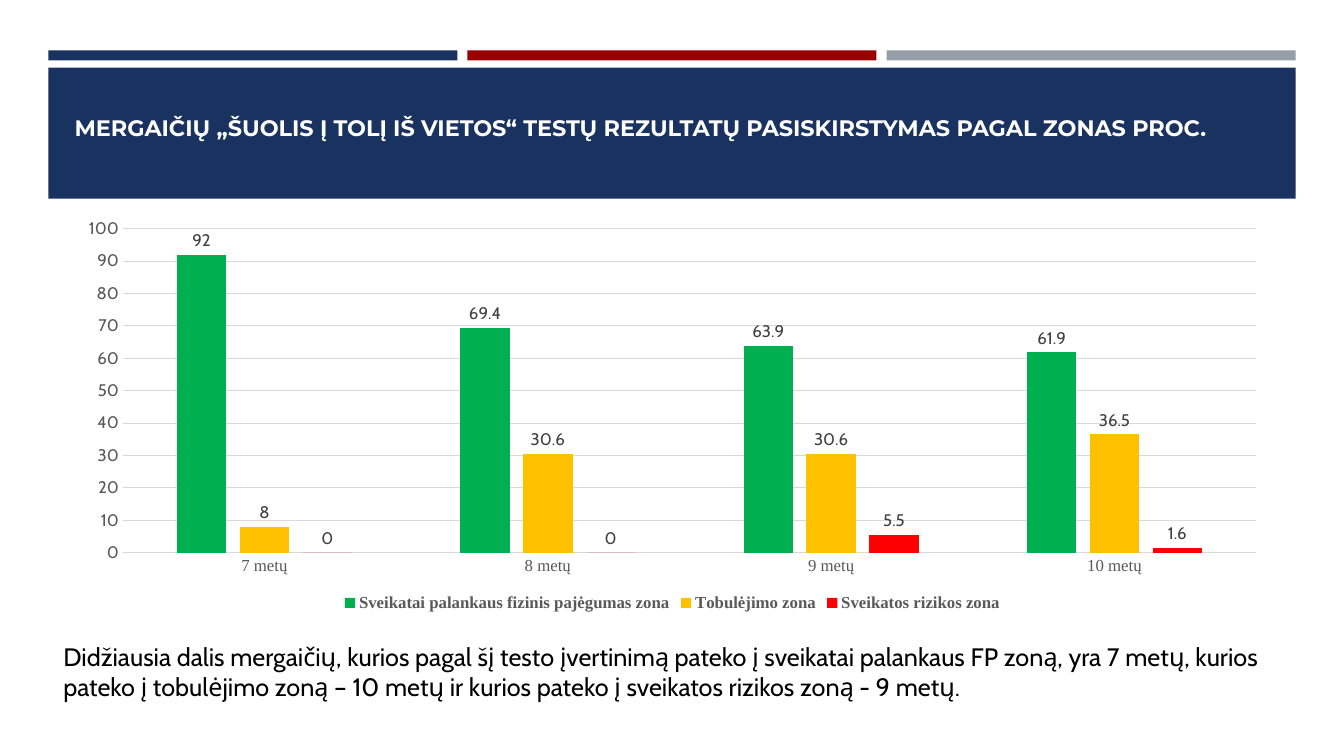
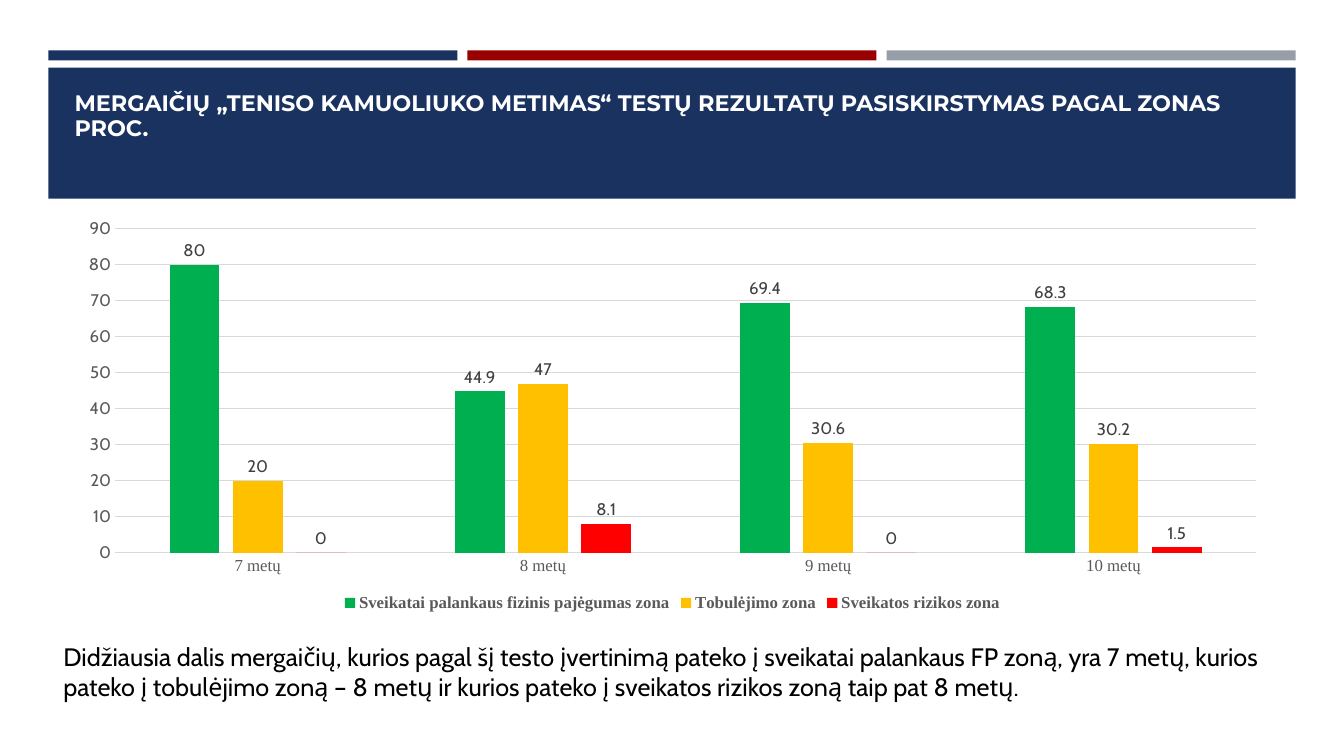
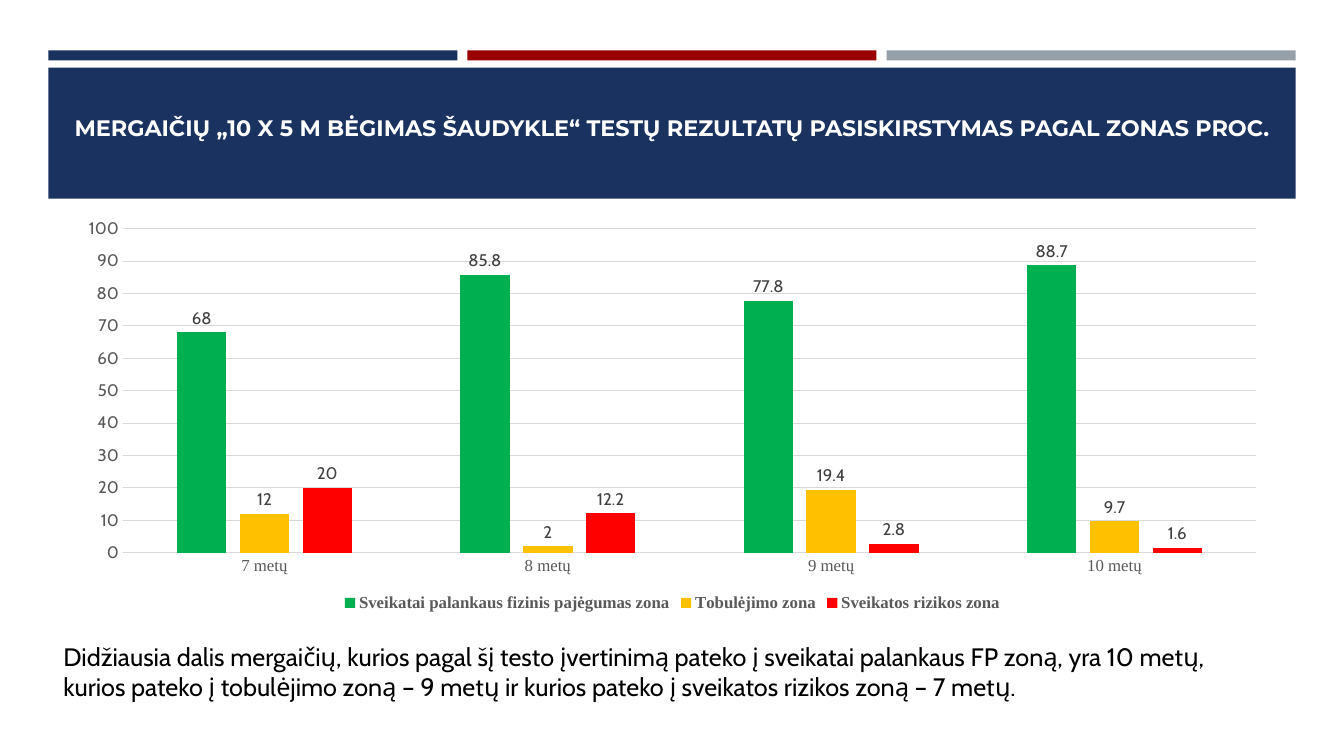
from pptx import Presentation, util as u
from pptx.chart.data import CategoryChartData
from pptx.dml.color import RGBColor
from pptx.enum import chart as ch, shapes, text

COLORS = {"navy": "1A3260", "red": "990000", "steel": "969FA7", "white": "FFFFFF",
          "black": "000000", "axis": "595959", "label": "404040", "grid": "D9D9D9"}
HEAD_FONT, BODY_FONT, CHART_FONT = "Montserrat", "Cabin", "Times New Roman"
STRIPES = ["navy", "red", "steel"]
ZONES = {"Sveikatai palankaus fizinis pajėgumas zona": "00B050",
         "Tobulėjimo zona": "FFC000",
         "Sveikatos rizikos zona": "FF0000"}
AGES = ["7 metų", "8 metų", "9 metų", "10 metų"]

BAND_BOX = (0.48, 0.5, 12.37, 1.47)
TITLE_BOX = (0.64, 0.61, 12.06, 1.11)
CHART_BOX = (0.64, 2.09, 12.06, 4.02)
SUMMARY_BOX = (0.53, 5.93, 12.06, 1.47)

TITLE = "MERGAIČIŲ „{}“ TESTŲ REZULTATŲ PASISKIRSTYMAS PAGAL ZONAS PROC."
SUMMARY = ("Didžiausia dalis mergaičių, kurios pagal šį testo įvertinimą pateko į sveikatai "
           "palankaus FP zoną, yra {} metų, kurios pateko į tobulėjimo zoną – {} metų ir "
           "kurios pateko į sveikatos rizikos zoną {} metų.")
TESTS = [
    ("ŠUOLIS Į TOLĮ IŠ VIETOS", ("7", "10", "- 9"),
     [(92, 69.4, 63.9, 61.9), (8, 30.6, 30.6, 36.5), (0, 0, 5.5, 1.6)]),
    ("TENISO KAMUOLIUKO METIMAS", ("7", "8", "taip pat 8"),
     [(80, 44.9, 69.4, 68.3), (20, 47, 30.6, 30.2), (0, 8.1, 0, 1.5)]),
    ("10 X 5 M BĖGIMAS ŠAUDYKLE", ("10", "9", "– 7"),
     [(68, 85.8, 77.8, 88.7), (12, 2, 19.4, 9.7), (20, 12.2, 2.8, 1.6)]),
]


def rgb(value):
    """Turn a hex string into a colour."""
    return RGBColor.from_string(value)


def inches(box):
    """Turn a box of numbers into lengths."""
    return [u.Inches(v) for v in box]


def set_font(font, name, size, color, bold=False):
    """Format a font."""
    font.name, font.size, font.bold = name, u.Pt(size), bold
    font.color.rgb = rgb(COLORS[color])


def add_band(s, layout, box):
    """Put the three stripes and the title band on the layout."""
    left, top, width, height = box
    gap, stripe_h, band_drop = 0.1, 0.1, 0.17
    stripe_w = (width - 2 * gap) / len(STRIPES)
    parts = [(color, (left + i * (stripe_w + gap), top, stripe_w, stripe_h))
             for i, color in enumerate(STRIPES)]
    parts.append(("navy", (left, top + band_drop, width, height - band_drop)))
    for color, part in parts:
        sp = s.shapes.add_shape(shapes.MSO_SHAPE.RECTANGLE, *inches(part))
        sp.shadow.inherit = False
        sp.fill.solid()
        sp.fill.fore_color.rgb = rgb(COLORS[color])
        sp.line.fill.background()
        layout.shapes.element.insert(2, sp.element)


def add_title(s, box, title):
    """Fill the title placeholder."""
    sp = s.shapes.title
    sp.left, sp.top, sp.width, sp.height = inches(box)
    tf = sp.text_frame
    tf.text = title
    tf.word_wrap = True
    tf.auto_size = text.MSO_AUTO_SIZE.NONE
    tf.vertical_anchor = text.MSO_ANCHOR.BOTTOM
    tf.margin_bottom = u.Inches(0.31)
    p = tf.paragraphs[0]
    p.alignment = text.PP_ALIGN.LEFT
    p.line_spacing = 0.95
    set_font(p.font, HEAD_FONT, 16, "white", True)


def add_zone_chart(s, box, values):
    """Add the clustered columns of zones by age."""
    data = CategoryChartData()
    data.categories = AGES
    for name, vals in zip(ZONES, values):
        data.add_series(name, vals)
    chart = s.shapes.add_chart(ch.XL_CHART_TYPE.COLUMN_CLUSTERED, *inches(box), data).chart
    set_font(chart.font, BODY_FONT, 10, "black")
    chart.has_title = False
    chart.has_legend = True
    chart.legend.position = ch.XL_LEGEND_POSITION.BOTTOM
    chart.legend.include_in_layout = False
    set_font(chart.legend.font, CHART_FONT, 12, "axis", True)
    for axis, name in ((chart.category_axis, CHART_FONT), (chart.value_axis, BODY_FONT)):
        axis.major_tick_mark = axis.minor_tick_mark = ch.XL_TICK_MARK.NONE
        set_font(axis.tick_labels.font, name, 12, "axis")
    chart.value_axis.format.line.fill.background()
    chart.value_axis.has_major_gridlines = True
    for line in (chart.category_axis.format.line, chart.value_axis.major_gridlines.format.line):
        line.color.rgb = rgb(COLORS["grid"])
        line.width = u.Pt(0.75)
    plot = chart.plots[0]
    plot.gap_width, plot.overlap, plot.vary_by_categories = 219, -27, False
    for series, color in zip(plot.series, ZONES.values()):
        series.format.fill.solid()
        series.format.fill.fore_color.rgb = rgb(color)
        series.invert_if_negative = False
        labels = series.data_labels
        labels.show_value = True
        labels.position = ch.XL_LABEL_POSITION.OUTSIDE_END
        set_font(labels.font, BODY_FONT, 12, "label")


def add_summary(s, box, summary):
    """Add the concluding sentence."""
    tf = s.shapes.add_textbox(*inches(box)).text_frame
    tf.word_wrap = True
    tf.vertical_anchor = text.MSO_ANCHOR.MIDDLE
    p = tf.paragraphs[0]
    p.text = summary
    set_font(p.font, BODY_FONT, 18, "black")


def main():
    """Build the presentation."""
    prs = Presentation()
    prs.slide_width, prs.slide_height = u.Inches(13.33), u.Inches(7.5)
    layout = prs.slide_layouts[5]
    for i, (test, ages, values) in enumerate(TESTS):
        s = prs.slides.add_slide(layout)
        if i == 0:
            add_band(s, layout, BAND_BOX)
        add_title(s, TITLE_BOX, TITLE.format(test))
        add_zone_chart(s, CHART_BOX, values)
        add_summary(s, SUMMARY_BOX, SUMMARY.format(*ages))
    prs.save("out.pptx")


if __name__ == "__main__":
    main()
